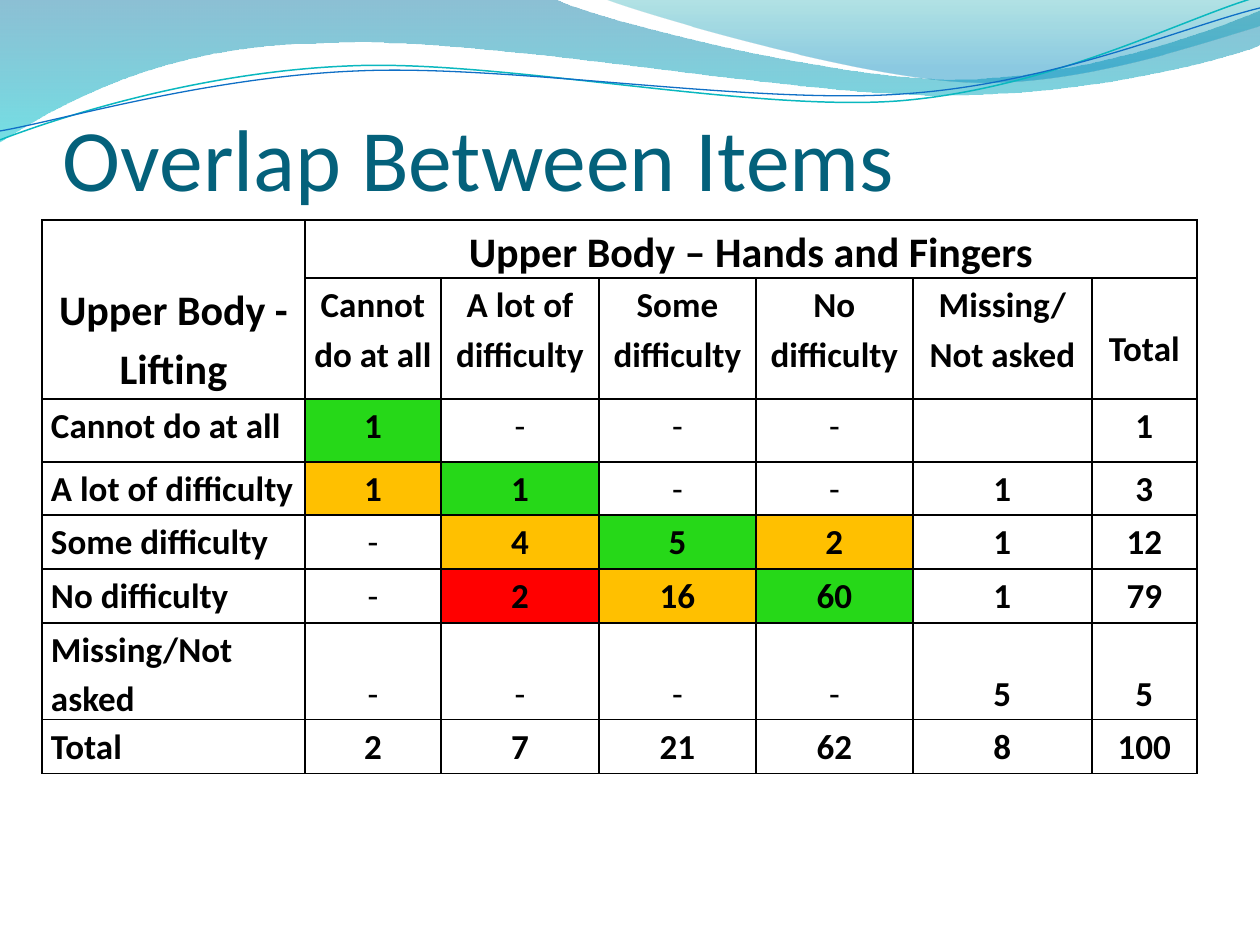
import math
import pptx
import pptx.util
import pptx.dml.color
import pptx.enum.text
import pptx.oxml.ns
from lxml import etree

PX = 914400 // 126
FONT = "Calibri"
TITLE = "Overlap Between Items"
GREEN, AMBER, RED = "26D818", "FFC000", "FF0000"
COLS = [263, 136, 158, 157, 157, 179, 105]
ROWS = [54, 121, 63, 53, 54, 54, 54, 54]
TABLE_HEIGHT = 553
LOWERED = 44
DATA = [
    ["", "Upper Body – Hands and Fingers", "", "", "", "", ""],
    ["Upper Body - Lifting", "Cannot do at all", "A lot of difficulty", "Some difficulty",
     "No difficulty", "Missing/ Not asked", "Total"],
    ["Cannot do at all", "1", "-", "-", "-", "", "1"],
    ["A lot of difficulty", "1", "1", "-", "-", "1", "3"],
    ["Some difficulty", "-", "4", "5", "2", "1", "12"],
    ["No difficulty", "-", "2", "16", "60", "1", "79"],
    ["Missing/Not asked", "-", "-", "-", "-", "5", "5"],
    ["Total", "2", "7", "21", "62", "8", "100"],
]
FILLS = {
    (2, 1): GREEN, (3, 2): GREEN, (4, 3): GREEN, (5, 4): GREEN,
    (3, 1): AMBER, (4, 2): AMBER, (4, 4): AMBER, (5, 3): AMBER,
    (5, 2): RED,
}
WAVES = [
    ([(0, -1), (554, -1), (600, 21, 837, 79, 955, 79), (1075, 79, 1207, 33, 1260, 11),
      (1261, 45), (1239, 55, 1096, 96, 940, 95), (784, 95, 481, 35, 324, 43),
      (163, 44, 58, 105, -1, 142), (0, -1)],
     [(0, "0074A1", 45), (1, "00C6CF", 55)]),
    ([(604, -1), (641, 14, 859, 78, 969, 82), (1079, 87, 1211, 40, 1260, 26), (1260, 0),
      (604, -1)],
     [(0, "00A1A9", 30), (0.8, "008BBF", 45)]),
]
TILT = -2.7
STRANDS = [
    ([(0, 140), (60, 117, 199, 72, 349, 66), (498, 59, 747, 112, 898, 101),
      (1050, 89, 1182, 19, 1257, -3)], (629, 72), "0AB8BF", 0.85),
    ([(0, 131), (59, 121, 207, 77, 357, 71), (508, 64, 752, 105, 903, 94),
      (1053, 84, 1186, 26, 1260, 8)], (629, 74), "0F6FC6", 0.75),
]


def rgb(color):
    return pptx.dml.color.RGBColor.from_string(color)


def pairs(step):
    return list(zip(step[::2], step[1::2]))


def trace(steps, n=24):
    points = [steps[0]]
    for step in steps[1:]:
        ctrl = [points[-1]] + pairs(step)
        if len(ctrl) == 2:
            points.append(step)
            continue
        for i in range(1, n + 1):
            t = i / n
            weights = ((1 - t) ** 3, 3 * t * (1 - t) ** 2, 3 * t * t * (1 - t), t ** 3)
            points.append(tuple(sum(w * c[axis] for w, c in zip(weights, ctrl))
                                for axis in (0, 1)))
    return [(round(x * PX), round(y * PX)) for x, y in points]


def turn(steps, center, degrees):
    cos, sin = math.cos(math.radians(degrees)), math.sin(math.radians(degrees))
    cx, cy = center
    turned = []
    for step in steps:
        out = ()
        for x, y in pairs(step):
            out += (cx + (x - cx) * cos - (y - cy) * sin,
                    cy + (x - cx) * sin + (y - cy) * cos)
        turned.append(out)
    return turned


def add_outline(s, steps, close):
    qn = pptx.oxml.ns.qn
    points = trace(steps)
    builder = s.shapes.build_freeform(*points[0], scale=1.0)
    builder.add_line_segments(points[1:], close=False)
    sp = builder.convert_to_shape()
    sp.shadow.inherit = False
    outline = next(sp.element.iter(qn("a:pathLst")))[0]
    for node in list(outline):
        outline.remove(node)
    for i, step in enumerate(steps):
        tag = "moveTo" if i == 0 else "lnTo" if len(step) == 2 else "cubicBezTo"
        node = etree.SubElement(outline, qn("a:" + tag))
        for x, y in pairs(step):
            etree.SubElement(node, qn("a:pt"), x=str(round(x * PX) - sp.left),
                             y=str(round(y * PX) - sp.top))
    if close:
        etree.SubElement(outline, qn("a:close"))
    return sp


def add_wave(s, steps, stops):
    sp = add_outline(s, steps, True)
    sp.line.fill.background()
    sp.fill.gradient()
    sp.fill.gradient_angle = 270
    for stop, (position, color, _) in zip(sp.fill.gradient_stops, stops):
        stop.position = position
        stop.color.rgb = rgb(color)
    colors = sp.element.spPr.iter(pptx.oxml.ns.qn("a:srgbClr"))
    for node, (_, _, opacity) in zip(colors, stops):
        etree.SubElement(node, pptx.oxml.ns.qn("a:alpha"), val=str(opacity * 1000))


def add_strand(s, steps, center, color, width):
    level = turn(steps, center, -TILT)
    sp = add_outline(s, level, False)
    middle = ((sp.left + sp.width / 2) / PX, (sp.top + sp.height / 2) / PX)
    x, y = turn([middle], center, TILT)[0]
    sp.left += round((x - middle[0]) * PX)
    sp.top += round((y - middle[1]) * PX)
    sp.rotation = TILT
    sp.fill.background()
    sp.line.color.rgb = rgb(color)
    sp.line.width = pptx.util.Pt(width)


def style(p, size, color, bold=False):
    p.font.name = FONT
    p.font.size = pptx.util.Pt(size)
    p.font.bold = bold
    p.font.color.rgb = rgb(color)


def add_borders(cell, hidden):
    qn = pptx.oxml.ns.qn
    tcPr = cell._tc.get_or_add_tcPr()
    for side in ("lnL", "lnR", "lnT", "lnB"):
        ln = etree.SubElement(tcPr, qn("a:" + side), w="12700")
        if side == hidden:
            etree.SubElement(ln, qn("a:noFill"))
        else:
            fill = etree.SubElement(ln, qn("a:solidFill"))
            etree.SubElement(fill, qn("a:srgbClr"), val="000000")


def fill_cell(cell, r, c):
    text = DATA[r][c]
    add_borders(cell, {(0, 0): "lnB", (1, 0): "lnT"}.get((r, c)))
    if (r, c) in FILLS:
        cell.fill.solid()
        cell.fill.fore_color.rgb = rgb(FILLS[r, c])
    else:
        cell.fill.background()
    lowered = (r, c) == (1, 6) or (r == 6 and c > 0)
    cell.margin_left = cell.margin_right = 9 * PX
    cell.margin_top = LOWERED * PX if lowered else 0
    cell.margin_bottom = 0
    p = cell.text_frame.paragraphs[0]
    if text:
        p.text = text
    p.line_spacing = 1.15
    align = pptx.enum.text.PP_ALIGN
    p.alignment = align.LEFT if c == 0 and r > 1 else align.CENTER
    style(p, 24 if r == 0 or (r, c) == (1, 0) else 20, "000000", text != "-")


def add_overlap_table(s):
    frame = s.shapes.add_table(len(ROWS), len(COLS), 42 * PX, 220 * PX,
                               sum(COLS) * PX, TABLE_HEIGHT * PX)
    table = frame.table
    table.first_row = table.horz_banding = False
    for col, width in zip(table.columns, COLS):
        col.width = width * PX
    for row, height in zip(table.rows, ROWS):
        row.height = height * PX
    frame.height = TABLE_HEIGHT * PX
    for r in range(len(ROWS)):
        for c in range(len(COLS)):
            fill_cell(table.cell(r, c), r, c)
    table.cell(0, 1).merge(table.cell(0, len(COLS) - 1))


def add_title(s):
    tf = s.shapes.add_textbox(63 * PX, 73 * PX, 1134 * PX, 136 * PX).text_frame
    tf.word_wrap = True
    tf.vertical_anchor = pptx.enum.text.MSO_ANCHOR.BOTTOM
    tf.margin_left = tf.margin_right = tf.margin_bottom = 0
    p = tf.paragraphs[0]
    p.text = TITLE
    style(p, 50, "04617B")


def main():
    prs = pptx.Presentation()
    prs.slide_width = pptx.util.Inches(10)
    prs.slide_height = pptx.util.Inches(7.5)
    s = prs.slides.add_slide(prs.slide_layouts[6])
    for wave in WAVES:
        add_wave(s, *wave)
    for strand in STRANDS:
        add_strand(s, *strand)
    add_title(s)
    add_overlap_table(s)
    prs.save("out.pptx")


if __name__ == "__main__":
    main()
